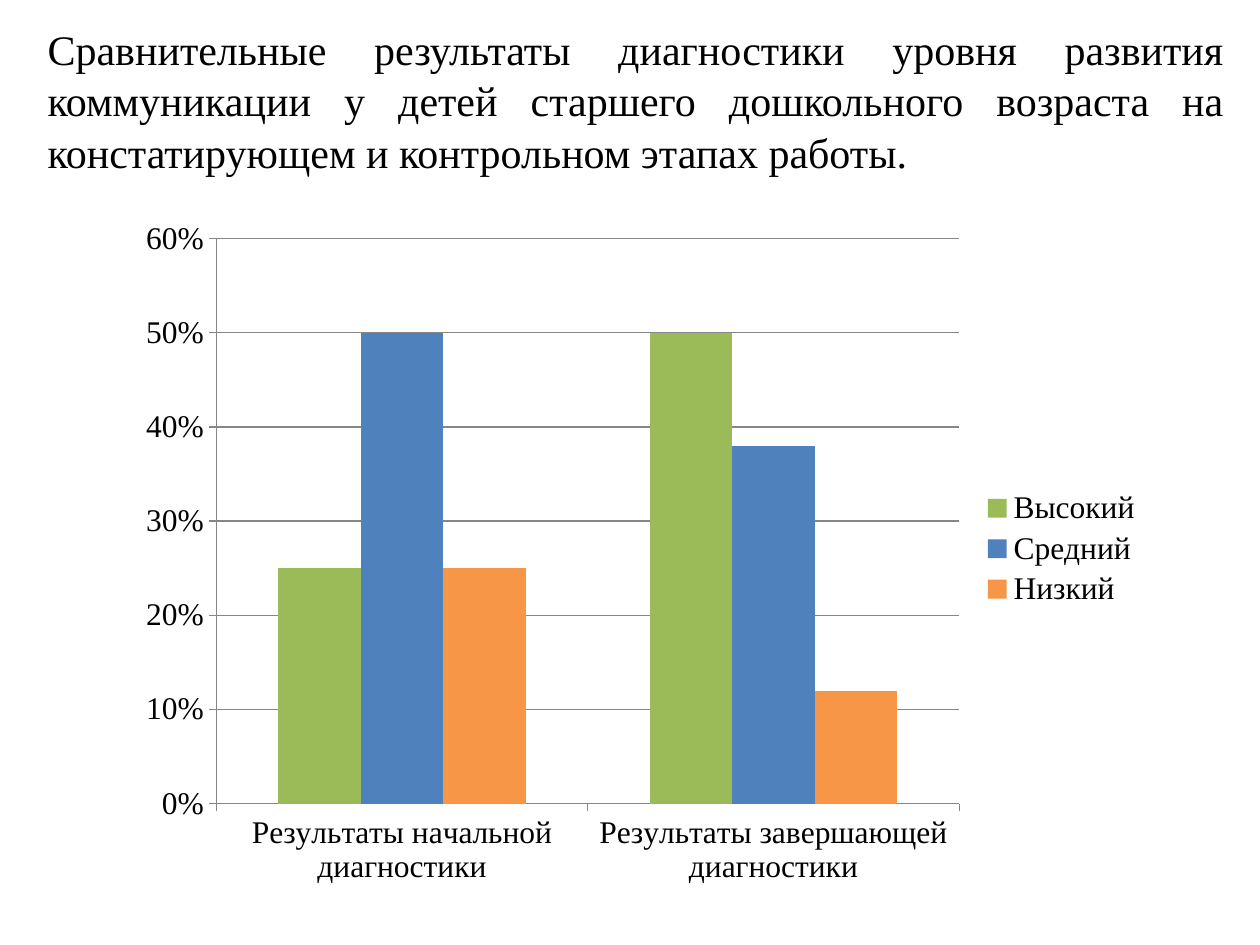
from lxml import etree
from pptx import Presentation
from pptx.chart.data import CategoryChartData
from pptx.dml.color import RGBColor
from pptx.enum.chart import XL_CHART_TYPE, XL_LEGEND_POSITION, XL_TICK_MARK
from pptx.enum.text import PP_ALIGN
from pptx.oxml.ns import qn
from pptx.util import Inches, Pt

COLUMNS = XL_CHART_TYPE.COLUMN_CLUSTERED
LEGEND_RIGHT = XL_LEGEND_POSITION.RIGHT
TICK_OUTSIDE = XL_TICK_MARK.OUTSIDE
JUSTIFY = PP_ALIGN.JUSTIFY

WIDTH, HEIGHT = Inches(10), Inches(7.5)
FONT = "Times New Roman"
COLORS = {
    "text": "000000",
    "axis": "868686",
    "Высокий": "9BBB59",
    "Средний": "4F81BD",
    "Низкий": "F79646",
}
TITLE = (
    "Сравнительные результаты диагностики уровня развития коммуникации "
    "у детей старшего дошкольного возраста на констатирующем и "
    "контрольном этапах работы."
)
CATEGORIES = ["Результаты начальной диагностики", "Результаты завершающей диагностики"]
LEVELS = {"Высокий": (0.25, 0.5), "Средний": (0.5, 0.38), "Низкий": (0.25, 0.12)}
PLOT_SHARES = {"x": 0.09, "y": 0.05, "w": 0.72, "h": 0.82}


def rgb(name):
    return RGBColor.from_string(COLORS[name])


def box(left, top, width, height):
    """Turn lengths in inches into slide lengths."""
    return [Inches(value) for value in (left, top, width, height)]


def format_font(font, size):
    font.name = FONT
    font.size = Pt(size)
    font.color.rgb = rgb("text")


def add_text(slide, text, area, size=18, align=None, line_spacing=None):
    frame = slide.shapes.add_textbox(*area).text_frame
    frame.word_wrap = True
    paragraph = frame.paragraphs[0]
    paragraph.alignment = align
    paragraph.line_spacing = line_spacing
    run = paragraph.add_run()
    run.text = text
    format_font(run.font, size)


def format_line(line):
    line.color.rgb = rgb("axis")
    line.width = Pt(0.75)


def format_axis(axis):
    axis.major_tick_mark = TICK_OUTSIDE
    format_font(axis.tick_labels.font, 18)
    format_line(axis.format.line)


def place_plot(chart, shares):
    """Fix the inner plot area as shares of the chart's size."""
    plot_area = chart.plots[0]._element.getparent()
    for old_layout in plot_area.findall(qn("c:layout")):
        plot_area.remove(old_layout)
    layout = etree.Element(qn("c:layout"))
    manual = etree.SubElement(layout, qn("c:manualLayout"))
    settings = {"layoutTarget": "inner", "xMode": "edge", "yMode": "edge", **shares}
    for tag, value in settings.items():
        etree.SubElement(manual, qn(f"c:{tag}")).set("val", str(value))
    plot_area.insert(0, layout)


def add_level_chart(slide, area):
    data = CategoryChartData(number_format="0%")
    data.categories = CATEGORIES
    for level, values in LEVELS.items():
        data.add_series(level, values)
    chart = slide.shapes.add_chart(COLUMNS, *area, data).chart
    chart.has_title = False
    format_font(chart.font, 18)

    plot = chart.plots[0]
    plot.gap_width = 150
    plot.overlap = 0
    plot.vary_by_categories = False
    for series in plot.series:
        series.format.fill.solid()
        series.format.fill.fore_color.rgb = rgb(series.name)

    format_axis(chart.category_axis)
    value_axis = chart.value_axis
    format_axis(value_axis)
    value_axis.minimum_scale, value_axis.maximum_scale = 0, 0.6
    value_axis.major_unit = 0.1
    value_axis.tick_labels.number_format = "0%"
    value_axis.tick_labels.number_format_is_linked = False
    format_line(value_axis.major_gridlines.format.line)

    chart.has_legend = True
    chart.legend.position = LEGEND_RIGHT
    chart.legend.include_in_layout = False
    format_font(chart.legend.font, 18)
    place_plot(chart, PLOT_SHARES)


def main():
    presentation = Presentation()
    presentation.slide_width, presentation.slide_height = WIDTH, HEIGHT
    slide = presentation.slides.add_slide(presentation.slide_layouts[6])
    add_text(slide, TITLE, box(0.28, 0.13, 9.53, 7.09),
             size=24, align=JUSTIFY, line_spacing=Pt(29.3))
    add_level_chart(slide, box(0.98, 1.62, 8.19, 5.47))
    presentation.save("out.pptx")


if __name__ == "__main__":
    main()
